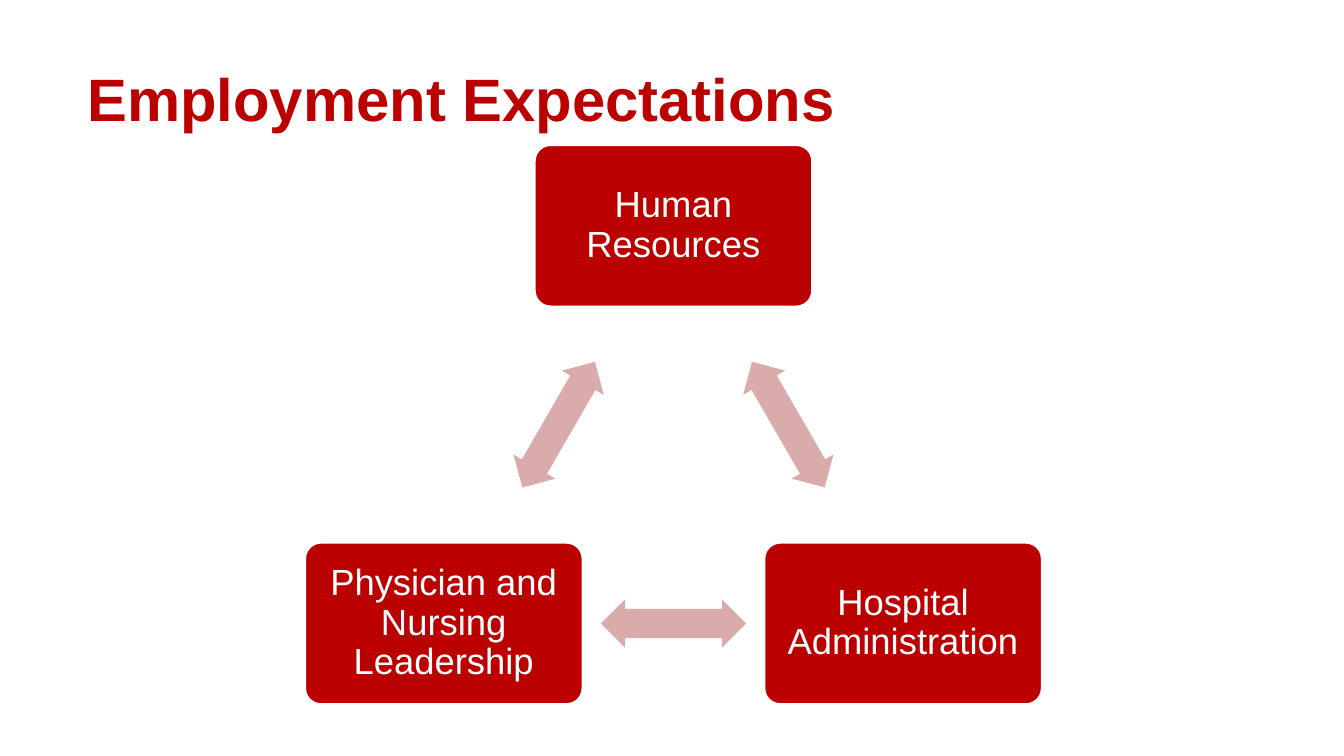
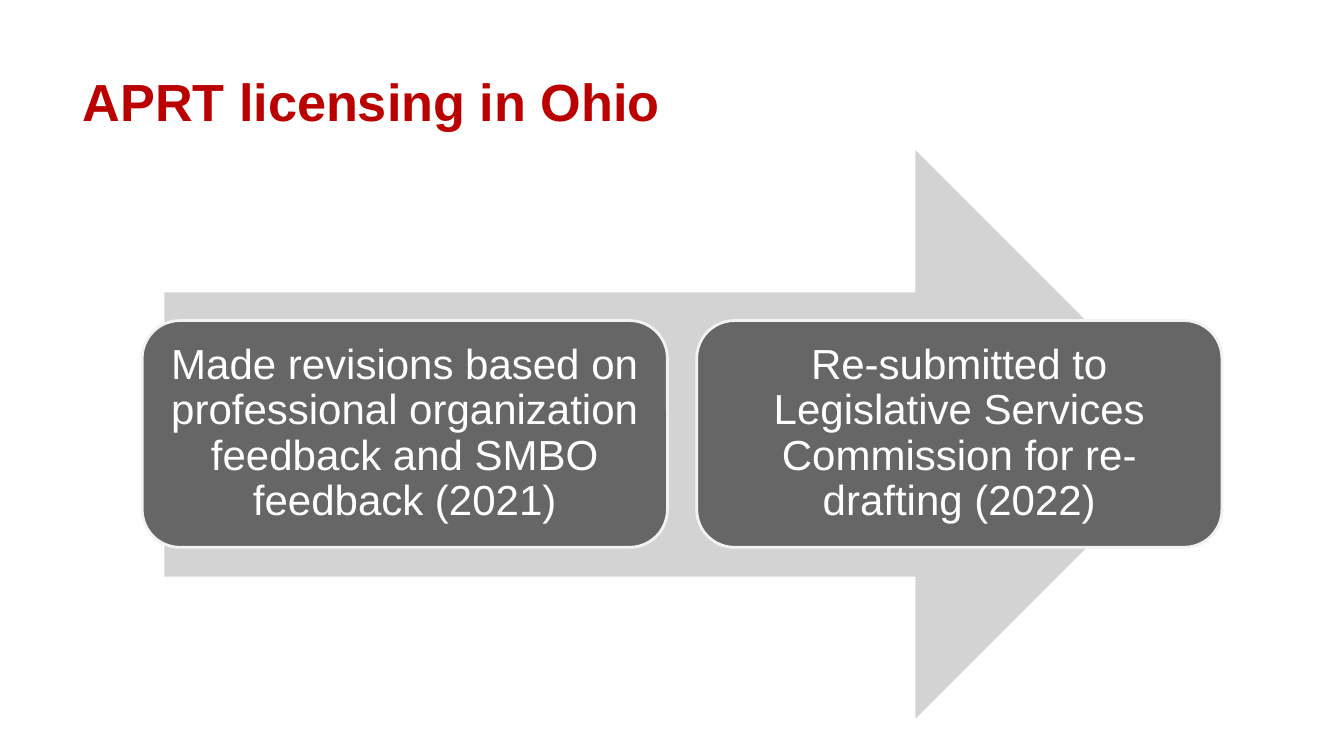
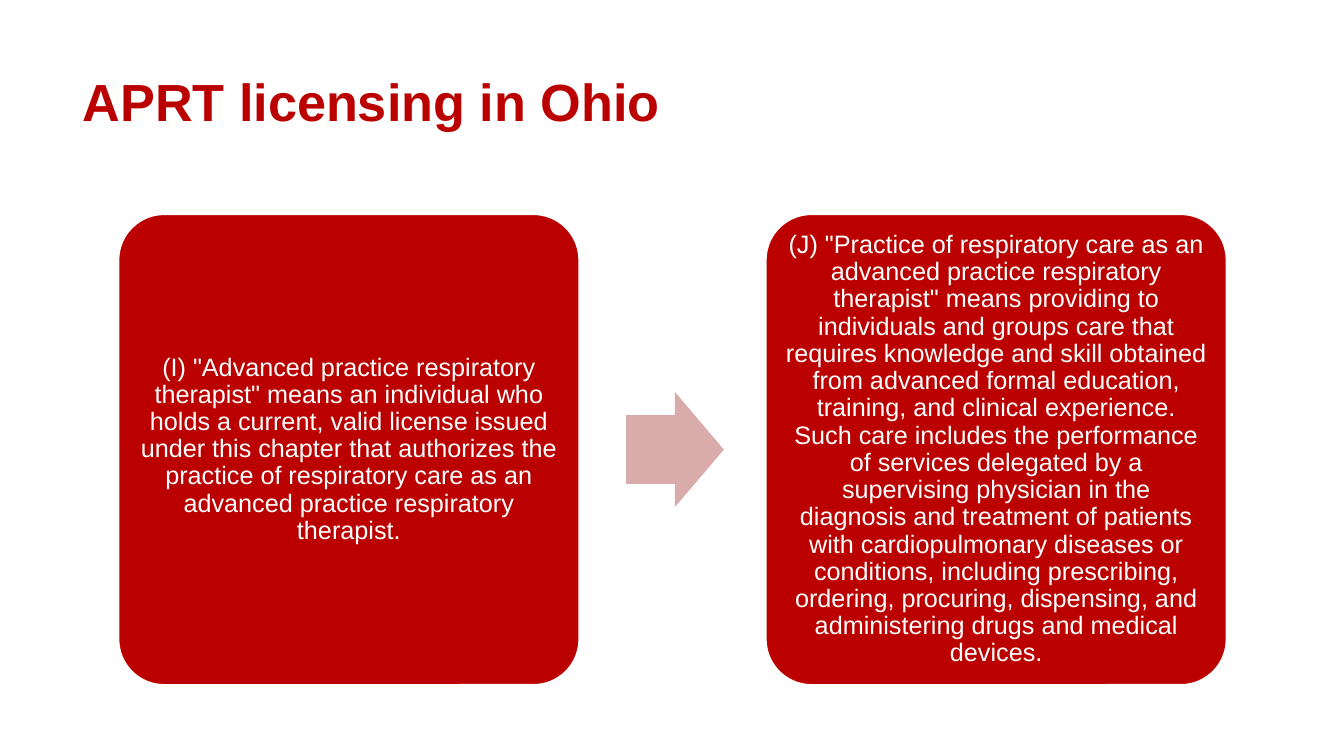
import math

from pptx import Presentation
from pptx.dml.color import RGBColor
from pptx.enum import shapes, text
from pptx.util import Inches, Pt

FONT = "Arial"
COLORS = {
    "red": "BB0000",
    "pink": "DAABAB",
    "dark": "666666",
    "silver": "D3D3D3",
    "pale": "F2F2F2",
    "white": "FFFFFF",
}
SHAPE = shapes.MSO_SHAPE

EXPECTATIONS_TITLE = "Employment Expectations"
LICENSING_TITLE = "APRT licensing in Ohio"
PARTIES = ["Human Resources", "Hospital Administration", "Physician and Nursing Leadership"]
STEPS = [
    "Made revisions based on professional organization feedback and SMBO feedback (2021)",
    "Re-submitted to Legislative Services Commission for re-drafting (2022)",
]
DEFINITIONS = [
    '(I) "Advanced practice respiratory therapist" means an individual who holds a current, '
    "valid license issued under this chapter that authorizes the practice of respiratory care "
    "as an advanced practice respiratory therapist.",
    '(J) "Practice of respiratory care as an advanced practice respiratory therapist" means '
    "providing to individuals and groups care that requires knowledge and skill obtained from "
    "advanced formal education, training, and clinical experience. Such care includes the "
    "performance of services delegated by a supervising physician in the diagnosis and "
    "treatment of patients with cardiopulmonary diseases or conditions, including prescribing, "
    "ordering, procuring, dispensing, and administering drugs and medical devices.",
]


def rgb(name):
    return RGBColor.from_string(COLORS[name])


def write(sp, content, size, color, bold=False, spacing=None):
    p = sp.text_frame.paragraphs[0]
    p.text = content
    p.line_spacing = spacing
    font = p.runs[0].font
    font.name, font.size, font.bold = FONT, Pt(size), bold
    font.color.rgb = rgb(color)
    return p


def add_title(s, content, box, size, wrap=True, anchor=text.MSO_ANCHOR.BOTTOM, spacing=0.85):
    sp = s.shapes.add_textbox(*map(Inches, box))
    sp.text_frame.word_wrap = wrap
    sp.text_frame.vertical_anchor = anchor
    write(sp, content, size, "red", bold=True, spacing=spacing)


def add_licensing_title(s):
    add_title(s, LICENSING_TITLE, (0.72, 0.76, 12.09, 0.6), 37.3)


def add_shape(s, kind, box, fill, line=None, adjust=()):
    sp = s.shapes.add_shape(kind, *map(Inches, box))
    sp.shadow.inherit = False
    sp.fill.solid()
    sp.fill.fore_color.rgb = rgb(fill)
    if line:
        sp.line.color.rgb = rgb(line)
        sp.line.width = Pt(2)
    else:
        sp.line.fill.background()
    for i, value in enumerate(adjust):
        sp.adjustments[i] = value
    return sp


def add_card(s, content, box, size, inset, fill="red", line="white", corner=0.1):
    sp = add_shape(s, SHAPE.ROUNDED_RECTANGLE, box, fill, line, [corner])
    tf = sp.text_frame
    tf.word_wrap = True
    tf.vertical_anchor = text.MSO_ANCHOR.MIDDLE
    tf.margin_left = tf.margin_right = tf.margin_top = tf.margin_bottom = Inches(inset)
    write(sp, content, size, "white", spacing=0.9).alignment = text.PP_ALIGN.CENTER


def centered(x, y, w, h):
    return x - w / 2, y - h / 2, w, h


def build_expectations(s):
    """Three cards on a circle, joined by arrows halfway between neighbours."""
    add_title(s, EXPECTATIONS_TITLE, (0.77, 0.56, 7.7, 0.82), 42.7,
              wrap=False, anchor=text.MSO_ANCHOR.TOP, spacing=None)
    cx, cy, radius = 6.68, 4.87, 2.63
    count = len(PARTIES)
    angles = [2 * math.pi * i / count - math.pi / 2 for i in range(count)]
    centers = [(cx + radius * math.cos(a), cy + radius * math.sin(a)) for a in angles]
    for i, (party, (x, y)) in enumerate(zip(PARTIES, centers)):
        add_card(s, party, centered(x, y, 2.76, 1.61), 26, 0.11)
        nx, ny = centers[(i + 1) % count]
        arrow = add_shape(s, SHAPE.LEFT_RIGHT_ARROW,
                          centered((x + nx) / 2, (y + ny) / 2, 1.44, 0.48),
                          "pink", adjust=(0.6, 0.5))
        arrow.rotation = round(math.degrees(math.atan2(ny - y, nx - x))) % 360


def build_steps(s):
    add_licensing_title(s)
    add_shape(s, SHAPE.RIGHT_ARROW, (1.63, 1.49, 10.27, 5.64), "silver")
    left, width, gap = 1.41, 5.21, 0.29
    for i, step in enumerate(STEPS):
        add_card(s, step, (left + i * (width + gap), 3.18, width, 2.25), 30, 0.12,
                 fill="dark", line="pale", corner=1 / 6)


def build_definitions(s):
    add_licensing_title(s)
    left, top, width, height, pitch = 1.17, 2.12, 4.58, 4.68, 6.42
    for i, definition in enumerate(DEFINITIONS):
        add_card(s, definition, (left + i * pitch, top, width, height), 18, 0.07)
    add_shape(s, SHAPE.RIGHT_ARROW, (6.21, 3.89, 0.97, 1.14), "pink", adjust=(0.6, 0.5))


def main():
    prs = Presentation()
    prs.slide_width, prs.slide_height = Inches(13.33), Inches(7.5)
    for build in (build_expectations, build_steps, build_definitions):
        build(prs.slides.add_slide(prs.slide_layouts[6]))
    prs.save("out.pptx")


if __name__ == "__main__":
    main()
